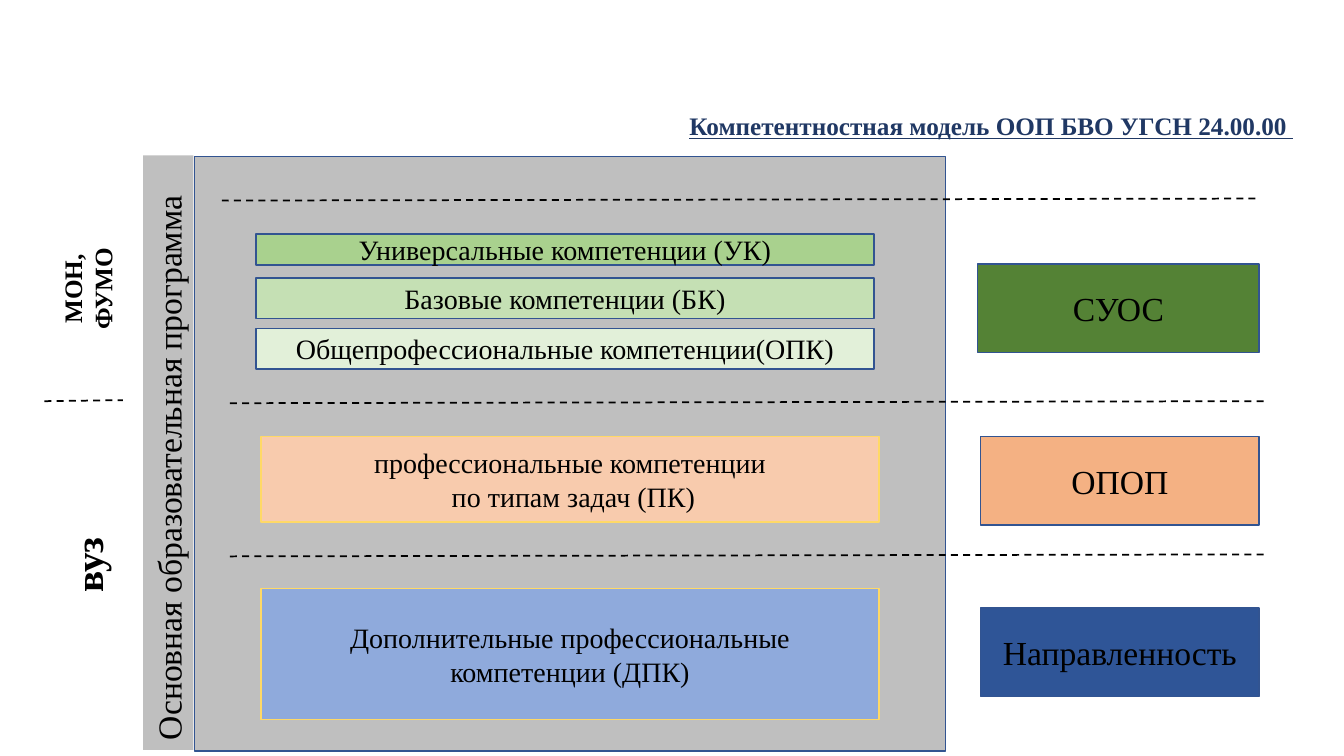
from pptx import Presentation
from pptx.dml.color import RGBColor as Rgb
from pptx.enum.dml import MSO_LINE as Dash
from pptx.enum.shapes import MSO_CONNECTOR as Link, MSO_SHAPE as Kind
from pptx.enum.text import MSO_ANCHOR as Anchor, MSO_AUTO_SIZE as Fit, PP_ALIGN as Align
from pptx.oxml.ns import qn
from pptx.util import Inches, Pt
from lxml.etree import SubElement as Sub

STEP = 0.1
COLS, ROWS = 133.33, 75
FONT = "Times New Roman"
HUES = {
    "ink": "000000", "title": "203864", "panel": "BFBFBF", "edge": "325491",
    "gold": "FFD966", "leaf": "A9D18E", "mint": "C5E0B4", "pale": "E2F0D9",
    "moss": "548235", "peach": "F8CBAD", "clay": "F4B183", "sky": "8FAADC",
    "navy": "2F5597",
}


def unit(num):
    return Inches(num * STEP)


def hue(name):
    return Rgb.from_string(HUES[name])


def write(shape, text, size=20, color="ink", bold=False, under=False,
          align=Align.CENTER, anchor=Anchor.MIDDLE, space=None, wrap=True):
    frame = shape.text_frame
    frame.word_wrap = wrap
    frame.auto_size = Fit.NONE
    frame.vertical_anchor = anchor
    frame.text = text
    for para in frame.paragraphs:
        para.alignment = align
        para.space_before = Pt(0)
        if space:
            para.line_spacing = space
        for run in para.runs:
            font = run.font
            font.name, font.size = FONT, Pt(size)
            font.bold, font.underline = bold, under
            font.color.rgb = hue(color)


def block(slide, area, fill, edge="edge", text=None, turn=0, **form):
    shape = slide.shapes.add_shape(Kind.RECTANGLE, *map(unit, area))
    shape.shadow.inherit = False
    shape.rotation = turn
    shape.fill.solid()
    shape.fill.fore_color.rgb = hue(fill)
    if edge:
        shape.line.color.rgb = hue(edge)
        shape.line.width = Pt(1)
    else:
        shape.line.fill.background()
    if text:
        write(shape, text, **form)


def label(slide, area, text, **form):
    box = slide.shapes.add_textbox(*map(unit, area))
    box.rotation = 270
    write(box, text, bold=True, anchor=Anchor.TOP, **form)


def rule(slide, left, top, width, rise):
    line = slide.shapes.add_connector(
        Link.STRAIGHT, *map(unit, (left, top, left + width, top - rise)))
    line.line.color.rgb = hue("ink")
    line.line.width = Pt(1.25)
    line.line.dash_style = Dash.DASH
    Sub(line.element.spPr, qn("a:effectLst"))


def head(slide, text):
    title = slide.shapes.title
    title.left, title.top, title.width, title.height = map(unit, (4.4, 9.8, 124.9, 5.7))
    write(title, text, size=18, color="title", bold=True, under=True,
          align=Align.RIGHT, space=0.9)


def main():
    deck = Presentation()
    deck.slide_width, deck.slide_height = unit(COLS), unit(ROWS)
    slide = deck.slides.add_slide(deck.slide_layouts[5])

    head(slide, "Компетентностная модель ООП БВО УГСН 24.00.00 ")
    block(slide, (19.3, 15.5, 74.5, 59), "panel")
    block(slide, (-12.8, 42.4, 59, 5), "panel", None, "Основная образовательная программа",
          270, size=24, align=Align.LEFT, anchor=Anchor.TOP)

    for top, high, fill, text in (
        (23.2, 3.1, "leaf", "Универсальные компетенции (УК)"),
        (27.6, 4, "mint", "Базовые компетенции (БК)"),
        (32.6, 4, "pale", "Общепрофессиональные компетенции(ОПК)"),
    ):
        block(slide, (25.4, top, 61.3, high), fill, text=text)

    for top, high, fill, text in (
        (43.3, 8.5, "peach", "профессиональные компетенции\n по типам задач (ПК)"),
        (58.4, 13, "sky", "Дополнительные профессиональные компетенции (ДПК)"),
    ):
        block(slide, (25.9, top, 61.3, high), fill, "gold", text)

    for left, top, fill, text in (
        (97, 26.2, "moss", "СУОС"),
        (97.3, 43.3, "clay", "ОПОП"),
        (97.3, 60.3, "navy", "Направленность"),
    ):
        block(slide, (left, top, 124.9 - left, 8.8), fill, text=text, size=24)

    for left, top in ((22, 19.9), (22.8, 40), (22.8, 55.2)):
        rule(slide, left, top, 102.8, 0.2)
    rule(slide, 4.4, 39.8, 7.8, 0.1)

    label(slide, (3.2, 25.1, 11, 7.1), "МОН,\nФУМО", size=18)
    label(slide, (3.2, 53.2, 11, 5.7), "вуз", size=28)
    deck.save("out.pptx")


if __name__ == "__main__":
    main()
